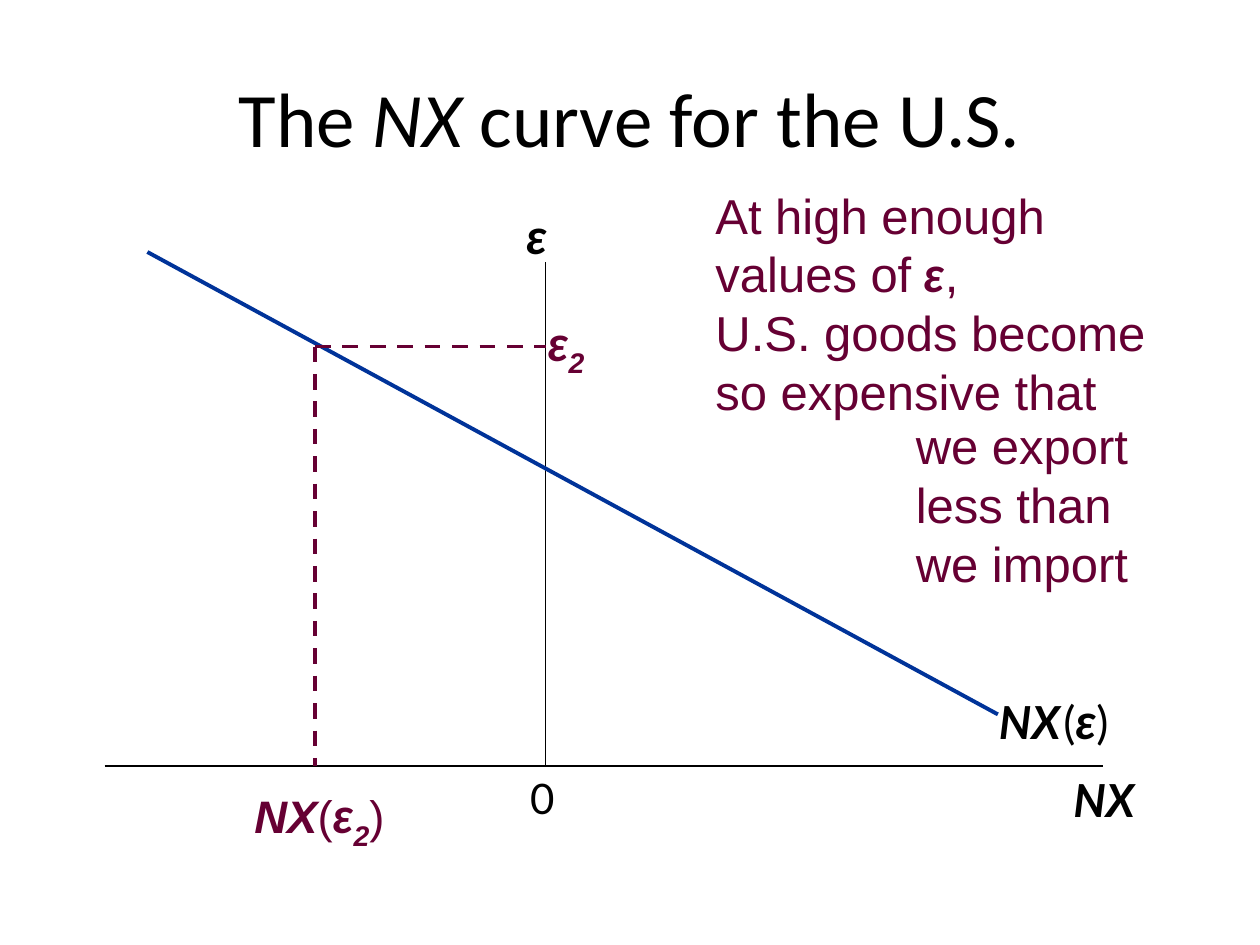
"""Build the slide showing the NX curve for the U.S."""
import pptx
import pptx.dml.color
import pptx.enum.dml
import pptx.enum.shapes
import pptx.enum.text
import pptx.oxml.ns
import pptx.util
from lxml import etree

Inches, Pt = pptx.util.Inches, pptx.util.Pt
COLORS = {"black": "000000", "blue": "003399", "plum": "660033"}

TITLE = [("The ", False), ("NX", True), (" curve for the U.S.", False)]

AXIS_X, AXIS_Y = 4.33, 6.08
NX2, EPS2 = 2.5, 2.75
LINES = [
    ((0.83, AXIS_Y), (8.75, AXIS_Y), "black", 1, False),
    ((AXIS_X, 2.08), (AXIS_X, AXIS_Y), "black", 1, False),
    ((1.17, 2), (7.92, 5.67), "blue", 2.25, False),
    ((NX2, EPS2), (AXIS_X, EPS2), "plum", 2.25, True),
    ((NX2, EPS2), (NX2, AXIS_Y), "plum", 2.25, True),
]

STYLES = {
    "zero": ("Lato", 24, False, 0),
    "var": ("Lato", 26, True, 0),
    "eps": ("Lato", 28, True, 0),
    "gap": ("Lato", 8, True, 0),
    "paren": ("Lato", 26, False, 0),
    "sub": ("Arial", 28, True, -25),
    "arial var": ("Arial", 26, True, 0),
    "arial paren": ("Arial", 26, False, 0),
    "prose": ("Arial", 28, False, 0),
}
BREAK = ("\n", "prose")
LABELS = [
    ((4.11, 6.08, 0.5, 0.5), "black", [("0", "zero")]),
    ((8.42, 6.08, 0.75, 0.53), "black", [("NX", "var")]),
    ((4.08, 1.58, 0.5, 0.57), "black", [("ε", "eps")]),
    ((7.83, 5.43, 1.25, 0.57), "black",
     [("NX", "var"), (" ", "gap"), ("(", "paren"), ("ε", "eps"), (")", "paren")]),
    ((4.25, 2.43, 0.67, 0.57), "plum", [("ε", "eps"), ("2", "sub")]),
    ((1.92, 6.18, 1.5, 0.57), "plum",
     [("NX", "arial var"), ("(", "arial paren"), ("ε", "eps"), ("2", "sub"),
      (")", "arial paren")]),
]
NOTES = [
    ((5.58, 1.42, 3.75, 1.97), "plum",
     [("At high enough values of", "prose"), (" ", "arial paren"), ("ε", "eps"),
      (", ", "prose"), BREAK, ("U.S. goods become so expensive that", "prose")]),
    ((7.17, 3.25, 2.25, 1.5), "plum", [("we export less than we import", "prose")]),
]


def rgb(name):
    return pptx.dml.color.RGBColor.from_string(COLORS[name])


def add_run(p, text, font, size, italic, color):
    r = p.add_run()
    r.text = text
    r.font.name, r.font.size, r.font.italic = font, Pt(size), italic
    r.font.color.rgb = rgb(color)
    return r


def add_title(s):
    sp = s.shapes.title
    sp.left, sp.top, sp.width, sp.height = map(Inches, (0.5, 0.3, 9, 1.25))
    sp.text_frame.vertical_anchor = pptx.enum.text.MSO_ANCHOR.MIDDLE
    p = sp.text_frame.paragraphs[0]
    p.alignment = pptx.enum.text.PP_ALIGN.CENTER
    for text, italic in TITLE:
        add_run(p, text, "Calibri", 44, italic, "black")


def add_line(s, start, end, color, width, dashed):
    kind = pptx.enum.shapes.MSO_CONNECTOR.STRAIGHT
    sp = s.shapes.add_connector(kind, *map(Inches, start + end))
    sp.line.color.rgb = rgb(color)
    sp.line.width = Pt(width)
    if dashed:
        sp.line.dash_style = pptx.enum.dml.MSO_LINE.DASH
    etree.SubElement(sp._element.spPr, pptx.oxml.ns.qn("a:effectLst"))


def add_text(s, box, color, runs, line_spacing=None):
    tf = s.shapes.add_textbox(*map(Inches, box)).text_frame
    tf.word_wrap = True
    p = tf.paragraphs[0]
    p.line_spacing = line_spacing
    for text, style in runs:
        if (text, style) == BREAK:
            p.add_line_break()
            continue
        font, size, strong, baseline = STYLES[style]
        r = add_run(p, text, font, size, strong, color)
        r.font.bold = strong
        if baseline:
            r.font._element.set("baseline", str(baseline * 1000))


def main():
    prs = pptx.Presentation()
    prs.slide_width, prs.slide_height = Inches(10), Inches(7.5)
    s = prs.slides.add_slide(prs.slide_layouts[5])
    add_title(s)
    for line in LINES:
        add_line(s, *line)
    for label in LABELS:
        add_text(s, *label)
    for note in NOTES:
        add_text(s, *note, line_spacing=Pt(33.6))
    prs.save("out.pptx")


if __name__ == "__main__":
    main()
